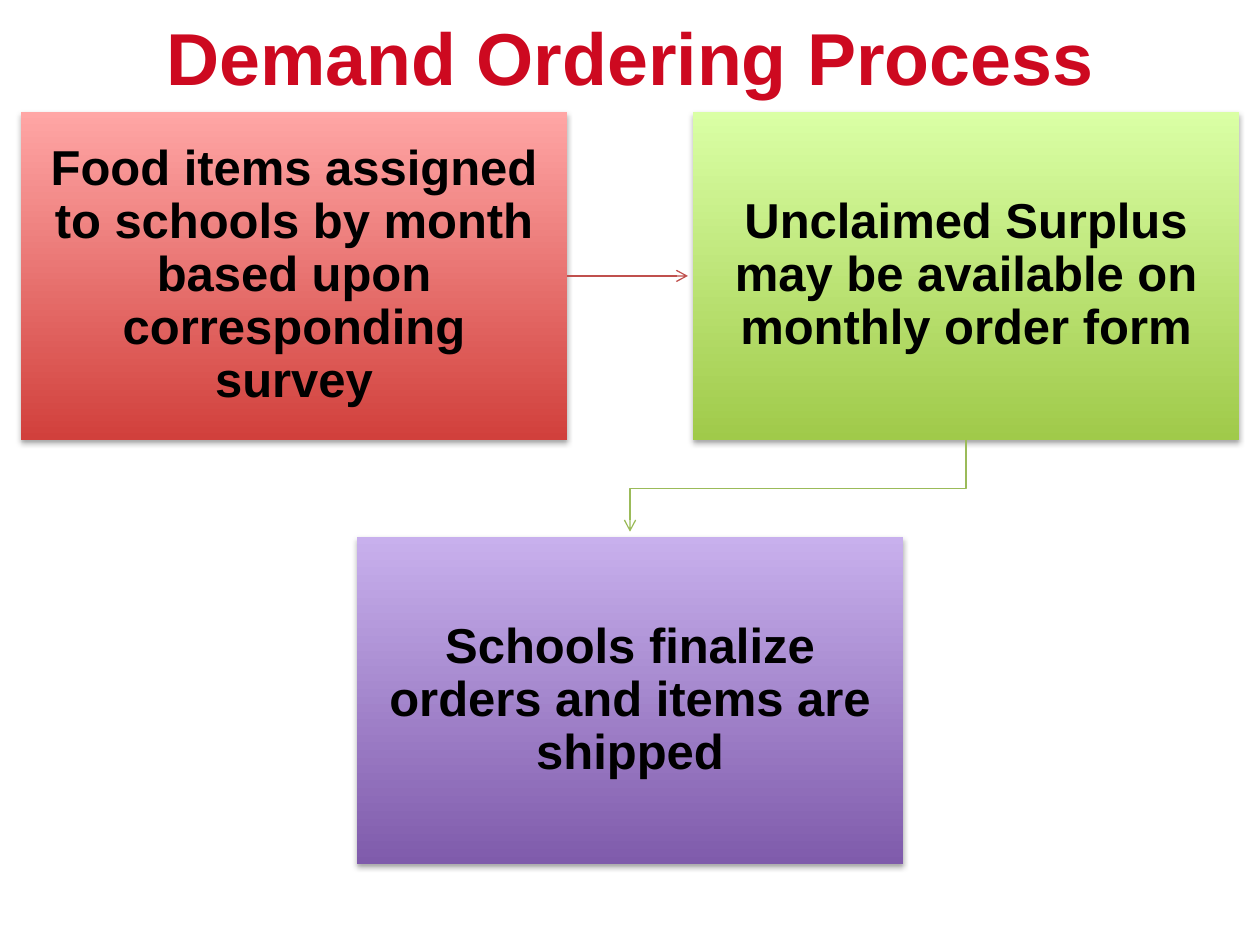
from dataclasses import dataclass

from lxml.etree import SubElement
from pptx import Presentation
from pptx.dml.color import RGBColor
from pptx.enum.shapes import MSO_CONNECTOR, MSO_SHAPE
from pptx.enum.text import MSO_ANCHOR, PP_ALIGN
from pptx.oxml import parse_xml
from pptx.oxml.ns import nsdecls, qn
from pptx.util import Inches, Pt

COLS, ROWS = 60, 75
WIDE, HIGH = 26, 26
LEFT, RIGHT, MID = 1, 33, 17
TOP, LOW = 8.9, 42.6
GAP = 0.4  # space between an arrowhead and its box, in rows

SHADE = f"""<a:outerShdw {nsdecls('a')} blurRad="40000" dist="23000" dir="5400000"
 rotWithShape="0"><a:srgbClr val="000000"><a:alpha val="35000"/></a:srgbClr></a:outerShdw>"""


@dataclass(frozen=True)
class Theme:
    font: str = "Arial"
    head: str = "CD0920"
    ink: str = "000000"
    red: tuple = ("D1403C", "FFA6A5")
    green: tuple = ("A0CA4A", "DAFFA5")
    violet: tuple = ("7F5BAB", "C8B0ED")
    redline: str = "C0504D"
    greenline: str = "9BBB59"
    big: float = 42
    size: float = 28
    thin: float = 0.75


class Board:
    def __init__(self, deck, theme):
        self.deck, self.theme = deck, theme
        self.slide = deck.slides.add_slide(deck.slide_layouts[5])

    def x(self, col):
        return round(self.deck.slide_width * col / COLS)

    def y(self, row):
        return round(self.deck.slide_height * row / ROWS)

    def label(self, frame, text, size, color, inset):
        frame.word_wrap = True
        frame.vertical_anchor = MSO_ANCHOR.MIDDLE
        frame.margin_left = frame.margin_right = Inches(inset)
        frame.margin_top = frame.margin_bottom = Inches(inset)
        para = frame.paragraphs[0]
        para.text = text
        para.alignment = PP_ALIGN.CENTER
        font = para.font
        font.name, font.size, font.bold = self.theme.font, Pt(size), True
        font.color.rgb = RGBColor.from_string(color)
        return para

    def title(self, text):
        shape = self.slide.shapes.title
        shape.left, shape.top = self.x(3), self.y(0.9)
        shape.width, shape.height = self.x(54), self.y(7.1)
        self.label(shape.text_frame, text, self.theme.big, self.theme.head, 0)

    def box(self, col, row, text, tones):
        shape = self.slide.shapes.add_shape(
            MSO_SHAPE.RECTANGLE, self.x(col), self.y(row), self.x(WIDE), self.y(HIGH))
        shape.fill.gradient()
        shape.fill.gradient_angle = 90
        for stop, tone in zip(shape.fill.gradient_stops, tones):
            stop.color.rgb = RGBColor.from_string(tone)
        shape.line.fill.background()
        shape.shadow.inherit = False
        shape._element.spPr.find(qn("a:effectLst")).append(parse_xml(SHADE))
        para = self.label(shape.text_frame, text, self.theme.size, self.theme.ink, 0.22)
        para.line_spacing = 0.9
        return shape

    def stroke(self, shape, color):
        """Give a line its colour, width and arrowhead."""
        shape.line.color.rgb = RGBColor.from_string(color)
        shape.line.width = Pt(self.theme.thin)
        outline = shape._element.spPr.find(qn("a:ln"))
        SubElement(outline, qn("a:tailEnd"), type="arrow")

    def arrow(self, box, end, color):
        """Run straight from the right side of a box to a column."""
        mid = box.top + box.height // 2
        line = self.slide.shapes.add_connector(
            MSO_CONNECTOR.STRAIGHT, box.left + box.width, mid, self.x(end), mid)
        line.begin_connect(box, 3)
        self.stroke(line, color)
        SubElement(line._element.spPr, qn("a:effectLst"))

    def elbow(self, points, color):
        first, *rest = [(self.x(col), self.y(row)) for col, row in points]
        pen = self.slide.shapes.build_freeform(*first)
        pen.add_line_segments(rest, close=False)
        line = pen.convert_to_shape()
        line.fill.background()
        line.shadow.inherit = False
        self.stroke(line, color)


def main():
    deck = Presentation()
    deck.slide_width, deck.slide_height = Inches(10), Inches(7.5)
    theme = Theme()
    board = Board(deck, theme)
    board.title("Demand Ordering Process")
    food = board.box(
        LEFT, TOP, "Food items assigned to schools by month based upon corresponding survey",
        theme.red)
    board.box(RIGHT, TOP, "Unclaimed Surplus may be available on monthly order form", theme.green)
    board.box(MID, LOW, "Schools finalize orders and items are shipped", theme.violet)

    board.arrow(food, RIGHT - 0.24, theme.redline)
    start, stop = RIGHT + WIDE / 2, MID + WIDE / 2
    base = TOP + HIGH
    bend = (base + LOW) / 2
    board.elbow([(start, base), (start, bend), (stop, bend), (stop, LOW - GAP)], theme.greenline)
    deck.save("out.pptx")


if __name__ == "__main__":
    main()
